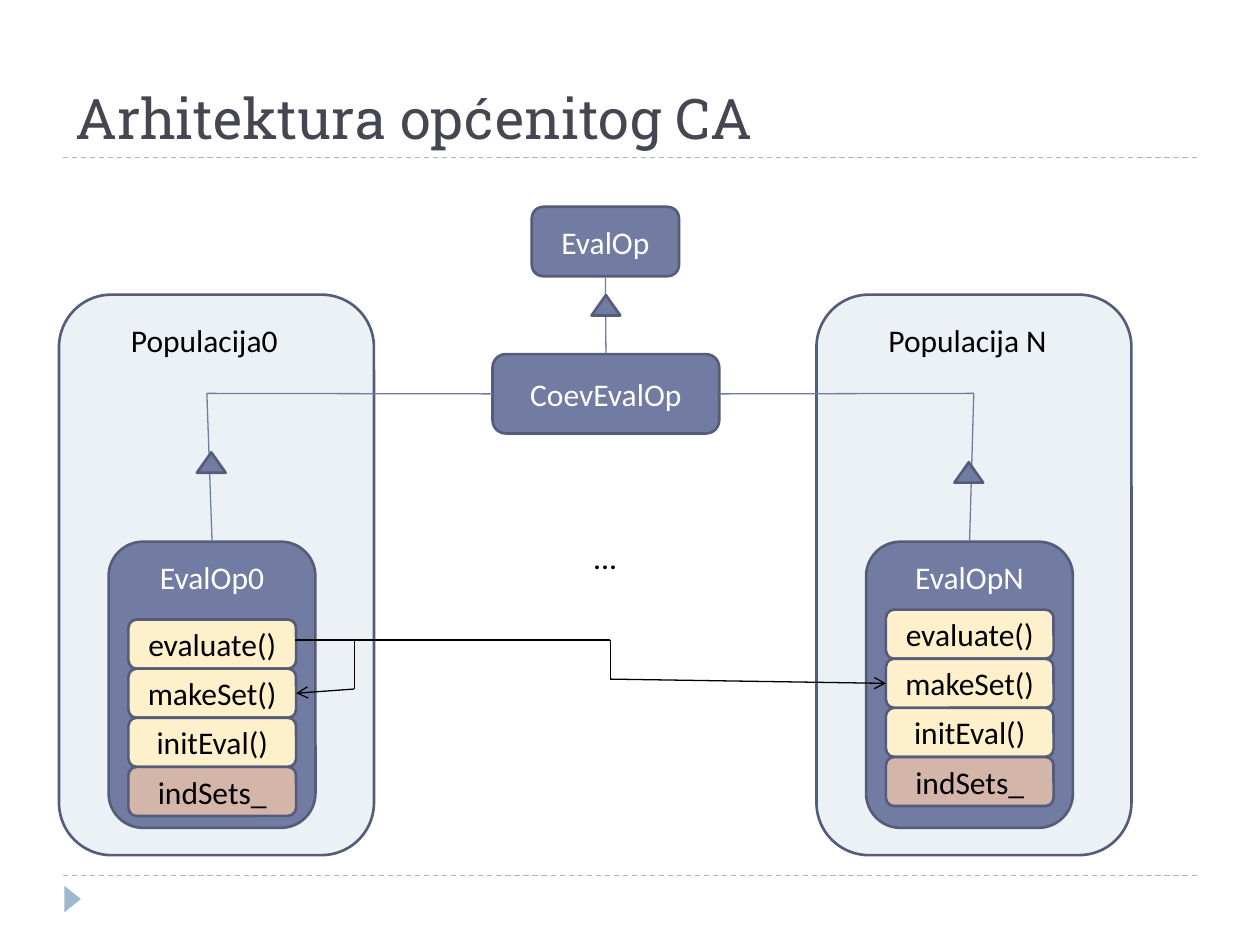
import dataclasses
import itertools

import pptx
import pptx.dml.color
import pptx.enum.dml
import pptx.enum.shapes
import pptx.enum.text
import pptx.oxml
import pptx.oxml.ns
import pptx.util

Cm, Pt = pptx.util.Cm, pptx.util.Pt
RGB = pptx.dml.color.RGBColor.from_string
SHAPES = pptx.enum.shapes.MSO_SHAPE
ANCHOR = pptx.enum.text.MSO_ANCHOR
ALIGN = pptx.enum.text.PP_ALIGN
TOP, LEFT, BOTTOM, RIGHT = range(4)


@dataclasses.dataclass(frozen=True)
class Theme:
    body_font: str = "Calibri"
    title_font: str = "Roboto Slab"
    body_size: int = 18
    title_size: int = 32
    outline_width: float = 1.5
    link_width: float = 0.75
    title: str = "464653"
    rule: str = "9FB8CD"
    operator: str = "727CA3"
    outline: str = "545C79"
    population: str = "ECF1F5"
    method: str = "FDF0CA"
    field: str = "D4B5AA"
    light: str = "FFFFFF"
    dark: str = "000000"


THEME = Theme()


def set_attributes(target, values):
    for name, value in values.items():
        setattr(target, name, value)


def write(shape, text, color, anchor=ANCHOR.MIDDLE, align=ALIGN.CENTER,
          font=THEME.body_font, size=THEME.body_size):
    frame = shape.text_frame
    set_attributes(frame, {"word_wrap": True, "vertical_anchor": anchor})
    paragraph = frame.paragraphs[0]
    paragraph.alignment = align
    run = paragraph.add_run()
    run.text = text
    set_attributes(run.font, {"name": font, "size": Pt(size)})
    run.font.color.rgb = RGB(color)


def add_label(slide, box, text, color=THEME.dark, anchor=ANCHOR.TOP, **style):
    label = slide.shapes.add_textbox(*map(Cm, box))
    write(label, text, color, anchor, ALIGN.LEFT, **style)


def add_block(slide, box, fill, kind=SHAPES.ROUNDED_RECTANGLE, outline=THEME.outline):
    block = slide.shapes.add_shape(kind, *map(Cm, box))
    block.shadow.inherit = False
    block.fill.solid()
    block.fill.fore_color.rgb = RGB(fill)
    if outline:
        block.line.color.rgb = RGB(outline)
        block.line.width = Pt(THEME.outline_width)
    else:
        block.line.fill.background()
    return block


def add_link(slide, points, color, begin=None, end=None, arrow=False, dashed=False):
    """Draw straight segments through points; begin and end are (shape, side) joins."""
    segments = []
    for start, stop in itertools.pairwise(points):
        segment = slide.shapes.add_connector(
            pptx.enum.shapes.MSO_CONNECTOR.STRAIGHT, *map(Cm, (*start, *stop)))
        segment.line.color.rgb = RGB(color)
        segment.line.width = Pt(THEME.link_width)
        if dashed:
            segment.line.dash_style = pptx.enum.dml.MSO_LINE.DASH
        pptx.oxml.ns.qn("a:effectLst")
        segment._element.spPr.append(pptx.oxml.parse_xml(
            f'<a:effectLst {pptx.oxml.ns.nsdecls("a")}/>'))
        segments.append(segment)
    if begin:
        segments[0].begin_connect(*begin)
    if end:
        segments[-1].end_connect(*end)
    if arrow:
        segments[-1].line._get_or_add_ln().append(pptx.oxml.parse_xml(
            f'<a:tailEnd {pptx.oxml.ns.nsdecls("a")} type="arrow"/>'))


def add_inheritance_mark(slide, left, top):
    add_block(slide, (left, top, 0.58, 0.41), THEME.operator, SHAPES.ISOSCELES_TRIANGLE)


def add_frame(slide, box, title):
    """Title, the dashed rules above and below the content, and the corner mark."""
    left, top, width, height = box
    for y in (top + 2.74, top + height):
        add_link(slide, [(left, y), (left + width, y)], THEME.rule, dashed=True)
    mark = add_block(slide, (left - 0.07, top + height + 0.31, 0.53, 0.33), THEME.rule,
                     SHAPES.ISOSCELES_TRIANGLE, outline=None)
    mark.rotation = 90
    add_label(slide, (left, top, width, 2.74), title, THEME.title, ANCHOR.BOTTOM,
              font=THEME.title_font, size=THEME.title_size)


def add_operators(slide, box):
    """The base operator above the coevolution operator; returns the latter."""
    left, top, width, height = box
    base = add_block(slide, (left + 0.79, top, 2.97, 1.4), THEME.operator)
    coevolution = add_block(slide, (left, top + height - 1.6, width, 1.6), THEME.operator)
    write(base, "EvalOp", THEME.light)
    write(coevolution, "CoevEvalOp", THEME.light)
    middle = left + width / 2
    add_link(slide, [(middle, top + 1.4), (middle, top + height - 1.6)], THEME.operator,
             (base, BOTTOM), (coevolution, TOP))
    add_inheritance_mark(slide, middle - 0.29, top + 1.78)
    return coevolution


def add_population(slide, box, name, operator_name, parent, side, bend, mark_top, rows_top):
    """A population with its operator, joined to parent; returns the member blocks."""
    left, top, width, height = box
    add_block(slide, box, THEME.population)
    add_label(slide, (left + 1.2, top + 0.41, 4.37, 1.02), name)
    operator = add_block(slide, (left + 1, top + 4.98, 4.17, 5.77), THEME.operator)
    write(operator, operator_name, THEME.light, ANCHOR.TOP)

    corner = (left + bend, top + 1.99)
    add_link(slide, [corner, corner], THEME.operator, begin=(parent, side))
    add_link(slide, [corner, corner], THEME.operator, end=(operator, TOP))
    add_inheritance_mark(slide, left + 2.78, top + mark_top)

    members = {}
    for row, member in enumerate(("evaluate()", "makeSet()", "initEval()", "indSets_")):
        fill = THEME.method if member.endswith("()") else THEME.field
        members[member] = add_block(
            slide, (left + 1.4, top + rows_top + row * 0.99, 3.38, 0.99), fill)
        write(members[member], member, THEME.dark)
    return members


def add_calls(slide, start, first, last):
    """Arrows from the first evaluate() to makeSet() of both populations."""
    x, y = start
    add_link(slide, [start, (x + 6.35, y), (x + 6.35, y + 0.79), (x + 11.9, y + 0.9)],
             THEME.dark, end=(last["makeSet()"], LEFT), arrow=True)
    add_link(slide, [(x + 1.19, y), (x + 1.19, y + 0.99), (x, y + 1.09)],
             THEME.dark, end=(first["makeSet()"], RIGHT), arrow=True)


def main():
    presentation = pptx.Presentation()
    set_attributes(presentation, {"slide_width": Cm(25.4), "slide_height": Cm(19.05)})
    slide = presentation.slides.add_slide(presentation.slide_layouts[6])

    add_frame(slide, (1.27, 0.43, 22.86, 17.22), "Arhitektura općenitog CA")
    coevolution = add_operators(slide, (9.93, 4.17, 4.57, 4.57))
    first = add_population(slide, (1.19, 5.94, 6.35, 11.3), "Populacija0", "EvalOp0",
                           coevolution, LEFT, bend=2.98, mark_top=3.18, rows_top=6.55)
    last = add_population(slide, (16.46, 5.94, 6.35, 11.3), "Populacija N", "EvalOpN",
                          coevolution, RIGHT, bend=3.17, mark_top=3.38, rows_top=6.35)
    add_label(slide, (11.71, 10.72, 0.99, 1.02), "...")
    add_calls(slide, (5.95, 12.9), first, last)
    presentation.save("out.pptx")


if __name__ == "__main__":
    main()
